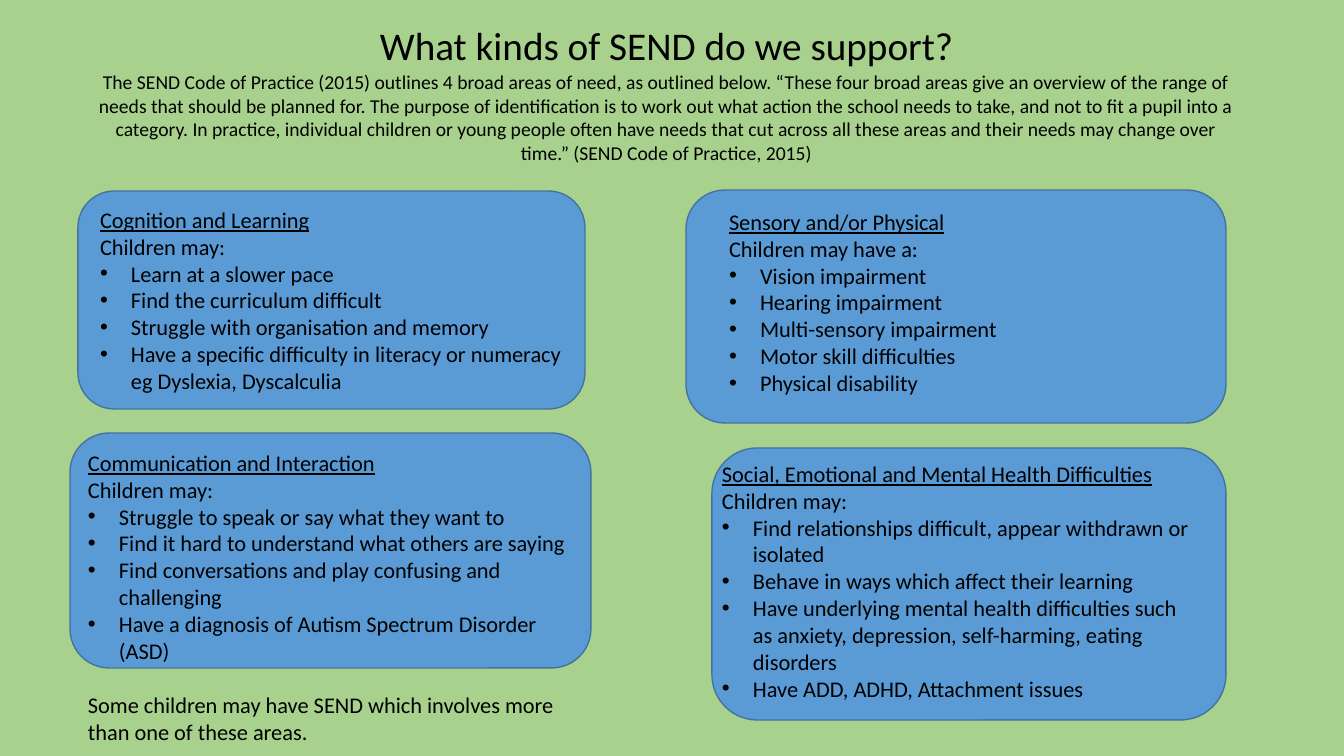
import pptx
import pptx.util
import pptx.dml.color
import pptx.enum.shapes
import pptx.enum.text
import lxml.etree

RGB = pptx.dml.color.RGBColor
GREEN = RGB(0xA9, 0xD1, 0x8E)
BLUE = RGB(0x5B, 0x9B, 0xD5)
EDGE = RGB(0x43, 0x73, 0x9E)
BLACK = RGB(0, 0, 0)
ALIGN = pptx.enum.text.PP_ALIGN
NS = "{http://schemas.openxmlformats.org/drawingml/2006/main}"
PX = 914400 / 100.8
INDENT = 31


def place(shape, *box):
    """Set left, top, width and height in px, and plain text-frame settings."""
    shape.left, shape.top, shape.width, shape.height = [round(n * PX) for n in box]
    frame = shape.text_frame
    frame.word_wrap = True
    frame.auto_size = pptx.enum.text.MSO_AUTO_SIZE.NONE
    frame.vertical_anchor = pptx.enum.text.MSO_ANCHOR.TOP
    frame.margin_left = frame.margin_right = round(10 * PX)
    frame.margin_top = frame.margin_bottom = round(5 * PX)


def write(frame, text, size=16, align=ALIGN.LEFT, under=False, bullet=False):
    """Fill the empty first paragraph, or add one after the last."""
    para = frame.add_paragraph() if frame.text else frame.paragraphs[0]
    para.alignment = align
    para.line_spacing = 1.0
    para.space_before = para.space_after = pptx.util.Pt(0)
    props = para._p.get_or_add_pPr()
    inset = round(INDENT * PX) if bullet else 0
    props.set("marL", str(inset))
    props.set("indent", str(-inset))
    if bullet:
        lxml.etree.SubElement(props, NS + "buFont", typeface="Arial")
        lxml.etree.SubElement(props, NS + "buChar", char="•")
    else:
        lxml.etree.SubElement(props, NS + "buNone")
    run = para.add_run()
    run.text = text
    font = run.font
    font.name = "Calibri"
    font.size = pptx.util.Pt(size)
    font.bold = False
    font.underline = under
    font.color.rgb = BLACK


deck = pptx.Presentation()
deck.slide_width = round(1344 * PX)
deck.slide_height = round(756 * PX)
slide = deck.slides.add_slide(deck.slide_layouts.get_by_name("Comparison"))
slide.background.fill.solid()
slide.background.fill.fore_color.rgb = GREEN
shapes = slide.shapes

title = shapes.title
place(title, 84, 16, 1165, 54)
write(title.text_frame, "What kinds of SEND do we support?", size=28, align=ALIGN.CENTER)

intro = shapes.add_textbox(0, 0, 0, 0)
place(intro, 84, 65, 1165, 104)
write(intro.text_frame,
      "The SEND Code of Practice (2015) outlines 4 broad areas of need, as outlined below. "
      "“These four broad areas give an overview of the range of needs that should be planned for. "
      "The purpose of identification is to work out what action the school needs to take, "
      "and not to fit a pupil into a category. In practice, individual children or young people "
      "often have needs that cut across all these areas and their needs may change over time.” "
      "(SEND Code of Practice, 2015)", size=14, align=ALIGN.CENTER)

# card box, text box, heading, lead-in, points
AREAS = [
    ((78, 191, 507, 218), (90, 201, 482, 227),
     "Cognition and Learning", "Children may:",
     ["Learn at a slower pace",
      "Find the curriculum difficult",
      "Struggle with organisation and memory",
      "Have a specific difficulty in literacy or numeracy eg Dyslexia, Dyscalculia"]),
    ((686, 190, 540, 233), (719, 203, 457, 231),
     "Sensory and/or Physical", "Children may have a:",
     ["Vision impairment",
      "Hearing impairment",
      "Multi-sensory impairment",
      "Motor skill difficulties",
      "Physical disability"]),
    ((70, 433, 521, 235), (78, 444, 514, 230),
     "Communication and Interaction", "Children may:",
     ["Struggle to speak or say what they want to",
      "Find it hard to understand what others are saying",
      "Find conversations and play confusing and challenging",
      "Have a diagnosis of Autism Spectrum Disorder (ASD)"]),
    ((712, 448, 514, 272), (712, 455, 489, 255),
     "Social, Emotional and Mental Health Difficulties", "Children may:",
     ["Find relationships difficult, appear withdrawn or isolated",
      "Behave in ways which affect their learning",
      "Have underlying mental health difficulties such as anxiety, depression, "
      "self-harming, eating disorders",
      "Have ADD, ADHD, Attachment issues"]),
]

for num, (card_box, text_box, head, lead, points) in enumerate(AREAS, 1):
    card = shapes.add_shape(pptx.enum.shapes.MSO_SHAPE.ROUNDED_RECTANGLE, 0, 0, 0, 0)
    place(card, *card_box)
    card.shadow.inherit = False
    card.fill.solid()
    card.fill.fore_color.rgb = BLUE
    card.line.color.rgb = EDGE
    card.line.width = pptx.util.Pt(1)
    shapes._spTree.insert(2, card._element)  # behind the text

    body = slide.placeholders[num]
    place(body, *text_box)
    write(body.text_frame, head, under=True)
    write(body.text_frame, lead)
    for point in points:
        write(body.text_frame, point, bullet=True)

note = shapes.add_textbox(0, 0, 0, 0)
place(note, 78, 686, 514, 64)
write(note.text_frame, "Some children may have SEND which involves more than one of these areas.")

deck.save("out.pptx")
